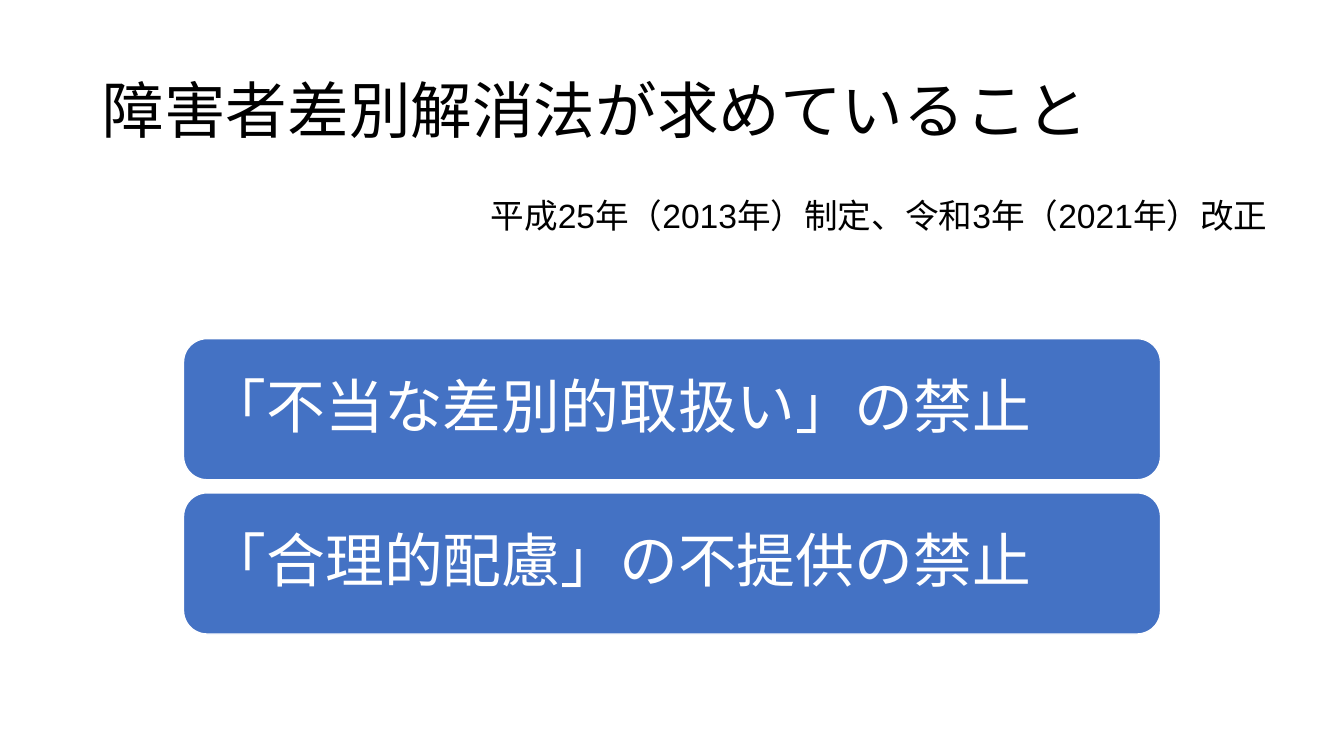
from pptx import Presentation
from pptx import util as u
from pptx.dml.color import RGBColor
from pptx.enum import shapes, text

COLORS = {"ink": "000000", "bar": "4472C4", "white": "FFFFFF"}


def color(name):
    return RGBColor.from_string(COLORS[name])


def write(shape, words, size, font, color_name, align, anchor):
    frame = shape.text_frame
    frame.word_wrap = True
    frame.vertical_anchor = anchor
    paragraph = frame.paragraphs[0]
    paragraph.alignment = align
    run = paragraph.add_run()
    run.text = words
    run.font.size = u.Pt(size)
    run.font.name = font
    run.font.color.rgb = color(color_name)
    return paragraph


presentation = Presentation()
presentation.slide_width = u.Inches(13.33)
presentation.slide_height = u.Inches(7.5)
slide = presentation.slides.add_slide(presentation.slide_layouts[6])

# Title
title = slide.shapes.add_textbox(
    u.Inches(0.92), u.Inches(0.4), u.Inches(11.5), u.Inches(1.45))
paragraph = write(title, "障害者差別解消法が求めていること", 44, "Calibri", "ink",
                  text.PP_ALIGN.LEFT, text.MSO_ANCHOR.MIDDLE)
paragraph.line_spacing = 0.9

# Enactment and revision dates
dates = slide.shapes.add_textbox(
    u.Inches(4.34), u.Inches(1.88), u.Inches(8.33), u.Inches(0.48))
paragraph = write(dates, "平成25年（2013年）制定、令和3年（2021年）改正", 24, "Arial", "ink",
                  text.PP_ALIGN.RIGHT, text.MSO_ANCHOR.TOP)
paragraph.space_before = u.Pt(10)
dates.text_frame.margin_left = u.Inches(0.2)

# The two prohibitions
prohibitions = ["「不当な差別的取扱い」の禁止", "「合理的配慮」の不提供の禁止"]
for index, words in enumerate(prohibitions):
    bar = slide.shapes.add_shape(
        shapes.MSO_SHAPE.ROUNDED_RECTANGLE,
        u.Inches(1.82), u.Inches(3.36 + index * 1.53), u.Inches(9.69), u.Inches(1.4))
    bar.shadow.inherit = False
    bar.fill.solid()
    bar.fill.fore_color.rgb = color("bar")
    bar.line.color.rgb = color("white")
    bar.line.width = u.Pt(1)
    paragraph = write(bar, words, 42, "Calibri", "white",
                      text.PP_ALIGN.LEFT, text.MSO_ANCHOR.MIDDLE)
    paragraph.line_spacing = 0.9
    frame = bar.text_frame
    frame.margin_left = frame.margin_right = u.Inches(0.17)
    frame.margin_top = frame.margin_bottom = u.Inches(0.17)

presentation.save("out.pptx")
